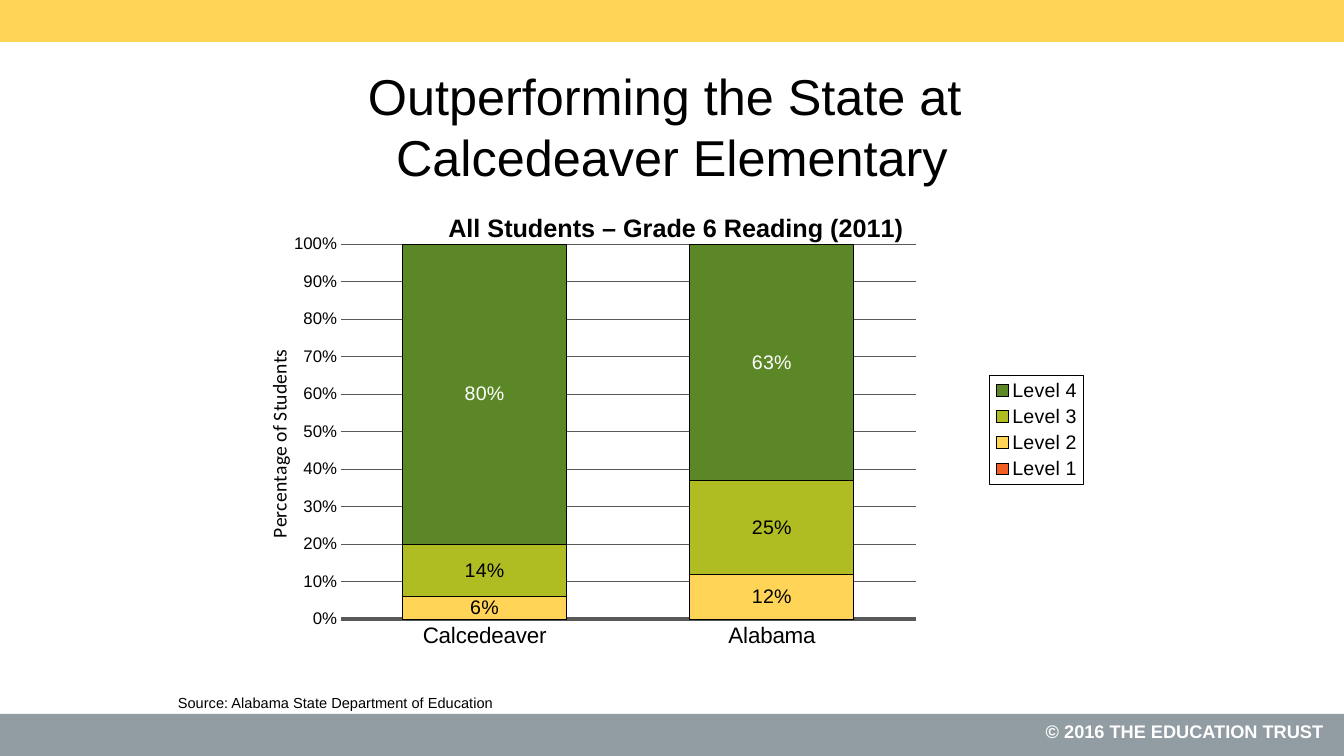
import pptx
import pptx.chart.data
import pptx.dml.color
import pptx.enum.chart
import pptx.enum.shapes
import pptx.enum.text
import pptx.oxml
import pptx.oxml.ns
import pptx.util
from dataclasses import dataclass

Pt = pptx.util.Pt
Align = pptx.enum.text.PP_ALIGN
Anchor = pptx.enum.text.MSO_ANCHOR


@dataclass
class Theme:
    font: str = "Arial"
    axis_title_font: str = "Calibri"
    black: str = "000000"
    white: str = "FFFFFF"
    gold: str = "FFD457"
    slate: str = "919CA3"
    grid: str = "595959"
    orange: str = "F15D22"
    lime: str = "AFBD22"
    green: str = "5C8727"
    title: float = 36
    chart_title: float = 18
    category: float = 16
    label: float = 14
    copyright: float = 13
    tick: float = 12
    source: float = 10.4


theme = Theme()
rgb = pptx.dml.color.RGBColor.from_string


def style(font, size, color=theme.black, bold=False, name=theme.font):
    font.name = name
    font.size = Pt(size)
    font.bold = bold
    font.color.rgb = rgb(color)


def place(element, left, top, width=None, height=None, inner=False):
    fractions = {"x": left / chart_width, "y": top / chart_height}
    if width:
        fractions.update(w=width / chart_width, h=height / chart_height)
    parts = '<c:layoutTarget val="inner"/>' if inner else ""
    parts += "".join(f'<c:{key}Mode val="edge"/>' for key in "xy")
    parts += "".join(f'<c:{key} val="{value:.4f}"/>' for key, value in fractions.items())
    namespace = pptx.oxml.ns.nsdecls("c")
    layout = pptx.oxml.parse_xml(
        f"<c:layout {namespace}><c:manualLayout>{parts}</c:manualLayout></c:layout>"
    )
    for old_layout in element.findall(pptx.oxml.ns.qn("c:layout")):
        element.remove(old_layout)
    overlay = element.find(pptx.oxml.ns.qn("c:overlay"))
    if overlay is None:
        element.insert(0, layout)
    else:
        overlay.addprevious(layout)


presentation = pptx.Presentation()
presentation.slide_width = Pt(960)
presentation.slide_height = Pt(540)
slide = presentation.slides.add_slide(presentation.slide_layouts[6])

for band_top, band_color in ((0, theme.gold), (510, theme.slate)):
    band = slide.shapes.add_shape(
        pptx.enum.shapes.MSO_SHAPE.RECTANGLE, 0, Pt(band_top), Pt(960), Pt(30)
    )
    band.shadow.inherit = False
    band.fill.solid()
    band.fill.fore_color.rgb = rgb(band_color)
    band.line.fill.background()

texts = [
    (["© 2016 THE EDUCATION TRUST"], (616, 510.5, 336, 24), theme.copyright,
     theme.white, True, Align.RIGHT, Anchor.TOP, Pt(16)),
    (["Source: Alabama State Department of Education"], (120, 492, 684, 18), theme.source,
     theme.black, False, Align.LEFT, Anchor.TOP, None),
    (["Outperforming the State at ", "Calcedeaver Elementary"], (156, 48, 648, 84), theme.title,
     theme.black, False, Align.CENTER, Anchor.MIDDLE, None),
]
for lines, box, size, color, bold, alignment, anchor, spacing in texts:
    shape = slide.shapes.add_textbox(*map(Pt, box))
    frame = shape.text_frame
    frame.word_wrap = True
    frame.vertical_anchor = anchor
    paragraph = frame.paragraphs[0]
    paragraph.alignment = alignment
    paragraph.line_spacing = spacing
    for index, line in enumerate(lines):
        if index:
            paragraph.add_line_break()
        run = paragraph.add_run()
        run.text = line
        style(run.font, size, color, bold)

levels = [
    ("Level 1", (0, 0), theme.orange, None),
    ("Level 2", (0.06, 0.12), theme.gold, theme.black),
    ("Level 3", (0.14, 0.25), theme.lime, theme.black),
    ("Level 4", (0.8, 0.63), theme.green, theme.white),
]
chart_data = pptx.chart.data.CategoryChartData(number_format="0%")
chart_data.categories = ["Calcedeaver", "Alabama"]
for name, values, fill_color, label_color in levels:
    chart_data.add_series(name, values)

chart_width, chart_height = 600, 350.6
chart = slide.shapes.add_chart(
    pptx.enum.chart.XL_CHART_TYPE.COLUMN_STACKED_100,
    Pt(180), Pt(132), Pt(chart_width), Pt(chart_height), chart_data,
).chart
style(chart.font, theme.chart_title)
plot = chart.plots[0]
plot.gap_width = 75
plot.overlap = 100
plot.vary_by_categories = False

for series, (name, values, fill_color, label_color) in zip(plot.series, levels):
    series.format.fill.solid()
    series.format.fill.fore_color.rgb = rgb(fill_color)
    series.format.line.color.rgb = rgb(theme.black)
    series.format.line.width = Pt(0.75)
    if label_color:
        labels = series.data_labels
        labels.show_value = True
        labels.number_format = "0%"
        labels.number_format_is_linked = False
        labels.position = pptx.enum.chart.XL_LABEL_POSITION.CENTER
        style(labels.font, theme.label, label_color)

category_axis = chart.category_axis
category_axis.format.line.color.rgb = rgb(theme.grid)
category_axis.format.line.width = Pt(2.5)
value_axis = chart.value_axis
value_axis.minimum_scale = 0
value_axis.maximum_scale = 1
value_axis.major_unit = 0.1
value_axis.has_major_gridlines = True
value_axis.major_gridlines.format.line.color.rgb = rgb(theme.grid)
value_axis.major_gridlines.format.line.width = Pt(0.75)
value_axis.format.line.fill.background()
value_axis.tick_labels.number_format = "0%"
value_axis.tick_labels.number_format_is_linked = False
for axis, size in ((category_axis, theme.category), (value_axis, theme.tick)):
    axis.major_tick_mark = pptx.enum.chart.XL_TICK_MARK.NONE
    axis.minor_tick_mark = pptx.enum.chart.XL_TICK_MARK.NONE
    style(axis.tick_labels.font, size)

chart.has_title = True
value_axis.has_title = True
headings = [
    (chart.chart_title, "All Students – Grade 6 Reading (2011)", theme.chart_title, True, theme.font),
    (value_axis.axis_title, "Percentage of Students", theme.label, False, theme.axis_title_font),
]
for heading, text, size, bold, font_name in headings:
    run = heading.text_frame.paragraphs[0].add_run()
    run.text = text
    style(run.font, size, bold=bold, name=font_name)
axis_title_body = value_axis.axis_title.text_frame._txBody.bodyPr
axis_title_body.set("rot", "-5400000")
axis_title_body.set("vert", "horz")

chart.has_legend = True
legend = chart.legend
legend.position = pptx.enum.chart.XL_LEGEND_POSITION.RIGHT
legend.include_in_layout = False
style(legend.font, theme.label)
legend_border = pptx.oxml.parse_xml(
    f'<c:spPr {pptx.oxml.ns.nsdecls("c", "a")}><a:ln w="9525"><a:solidFill>'
    f'<a:srgbClr val="{theme.black}"/></a:solidFill></a:ln></c:spPr>'
)
legend._element.find(pptx.oxml.ns.qn("c:overlay")).addnext(legend_border)

place(chart.chart_title._element, 137, 16)
place(value_axis.axis_title._element, 7, 115)
place(legend._element, 527, 136, 67, 78)
place(chart._chartSpace.chart.plotArea, 63.6, 42.4, 410.4, 268, inner=True)

presentation.save("out.pptx")
